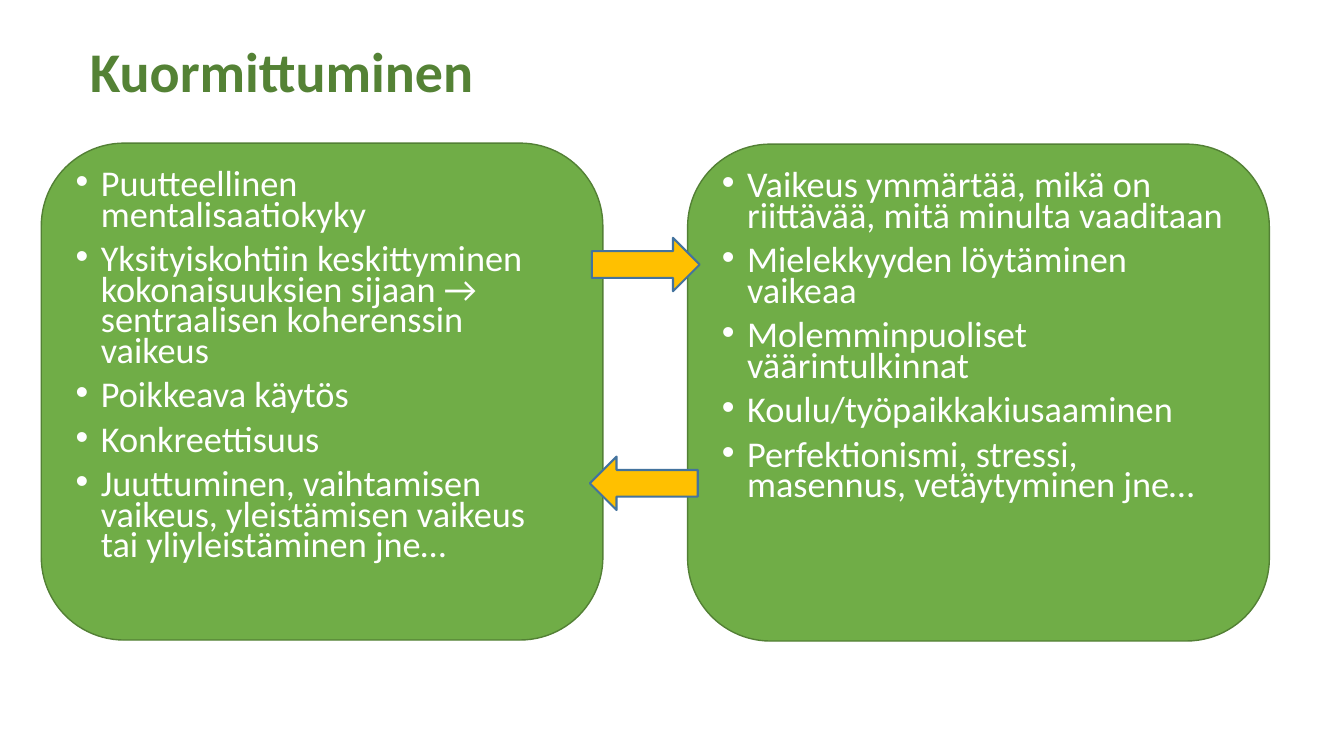
from dataclasses import dataclass

from lxml.etree import SubElement
from pptx import Presentation
from pptx.dml.color import RGBColor
from pptx.enum.shapes import MSO_SHAPE
from pptx.enum.text import MSO_ANCHOR, MSO_AUTO_SIZE, PP_ALIGN
from pptx.oxml.ns import qn
from pptx.util import Inches, Pt


@dataclass(frozen=True)
class Theme:
    font: str = "Calibri"
    title_size: float = 40
    body_size: float = 25.9
    title: RGBColor = RGBColor.from_string("548235")
    panel: RGBColor = RGBColor.from_string("70AD47")
    panel_line: RGBColor = RGBColor.from_string("538035")
    panel_text: RGBColor = RGBColor.from_string("FFFFFF")
    arrow: RGBColor = RGBColor.from_string("FFC000")
    arrow_line: RGBColor = RGBColor.from_string("43739E")


theme = Theme()


def add_text(paragraph, text, size, color, bold=False):
    """Add one styled run per line, with a line break between lines."""
    for number, line in enumerate(text.split("\n")):
        if number:
            paragraph.add_line_break()
        run = paragraph.add_run()
        run.text = line
        run.font.name = theme.font
        run.font.size = Pt(size)
        run.font.bold = bold
        run.font.color.rgb = color


def place(shape, left, top, width, height):
    shape.left, shape.top = Inches(left), Inches(top)
    shape.width, shape.height = Inches(width), Inches(height)


presentation = Presentation()
presentation.slide_width = Inches(13.33)
presentation.slide_height = Inches(7.5)
two_content_layout = presentation.slide_layouts[3]
slide = presentation.slides.add_slide(two_content_layout)

# Title
title = slide.shapes.title
place(title, 0.79, 0.34, 11.5, 0.79)
title.text_frame.auto_size = MSO_AUTO_SIZE.NONE
title.text_frame.vertical_anchor = MSO_ANCHOR.MIDDLE
title_paragraph = title.text_frame.paragraphs[0]
title_paragraph.alignment = PP_ALIGN.LEFT
title_paragraph.line_spacing = 0.9
add_text(title_paragraph, "Kuormittuminen", theme.title_size, theme.title, bold=True)

# Rounded panels with bullet lists
panels = [
    (1, (0.41, 1.42, 5.57, 4.93), [
        "Puutteellinen mentalisaatiokyky",
        "Yksityiskohtiin keskittyminen kokonaisuuksien sijaan →\n"
        "sentraalisen koherenssin vaikeus",
        "Poikkeava käytös",
        "Konkreettisuus",
        "Juuttuminen, vaihtamisen vaikeus, yleistämisen vaikeus tai yliyleistäminen jne…",
    ]),
    (2, (6.82, 1.43, 5.77, 4.93), [
        "Vaikeus ymmärtää, mikä on riittävää, mitä minulta vaaditaan",
        "Mielekkyyden löytäminen vaikeaa",
        "Molemminpuoliset väärintulkinnat",
        "Koulu/työpaikkakiusaaminen",
        "Perfektionismi, stressi, masennus, vetäytyminen jne…",
    ]),
]
for placeholder_index, box, items in panels:
    panel = slide.placeholders[placeholder_index]
    place(panel, *box)
    geometry = SubElement(panel.element.spPr, qn("a:prstGeom"), prst="roundRect")
    SubElement(geometry, qn("a:avLst"))
    panel.fill.solid()
    panel.fill.fore_color.rgb = theme.panel
    panel.line.color.rgb = theme.panel_line
    panel.line.width = Pt(1)

    text_frame = panel.text_frame
    text_frame.word_wrap = True
    text_frame.auto_size = MSO_AUTO_SIZE.NONE
    text_frame.vertical_anchor = MSO_ANCHOR.TOP
    for number, item in enumerate(items):
        paragraph = text_frame.add_paragraph() if number else text_frame.paragraphs[0]
        properties = paragraph._p.get_or_add_pPr()
        properties.set("marL", str(Inches(0.25)))
        properties.set("indent", str(Inches(-0.25)))
        SubElement(properties, qn("a:buFont"), typeface="Arial")
        SubElement(properties, qn("a:buChar"), char="•")
        paragraph.alignment = PP_ALIGN.LEFT
        paragraph.line_spacing = 0.7
        paragraph.space_before = Pt(10 if number else 0)
        add_text(paragraph, item, theme.body_size, theme.panel_text)

# Arrows between the panels
for left, top, rotation in [(5.87, 2.36, 0), (5.85, 4.53, 180)]:
    arrow = slide.shapes.add_shape(
        MSO_SHAPE.RIGHT_ARROW, Inches(left), Inches(top), Inches(1.07), Inches(0.53)
    )
    arrow.rotation = rotation
    arrow.shadow.inherit = False
    arrow.fill.solid()
    arrow.fill.fore_color.rgb = theme.arrow
    arrow.line.color.rgb = theme.arrow_line
    arrow.line.width = Pt(1.5)

presentation.save("out.pptx")
